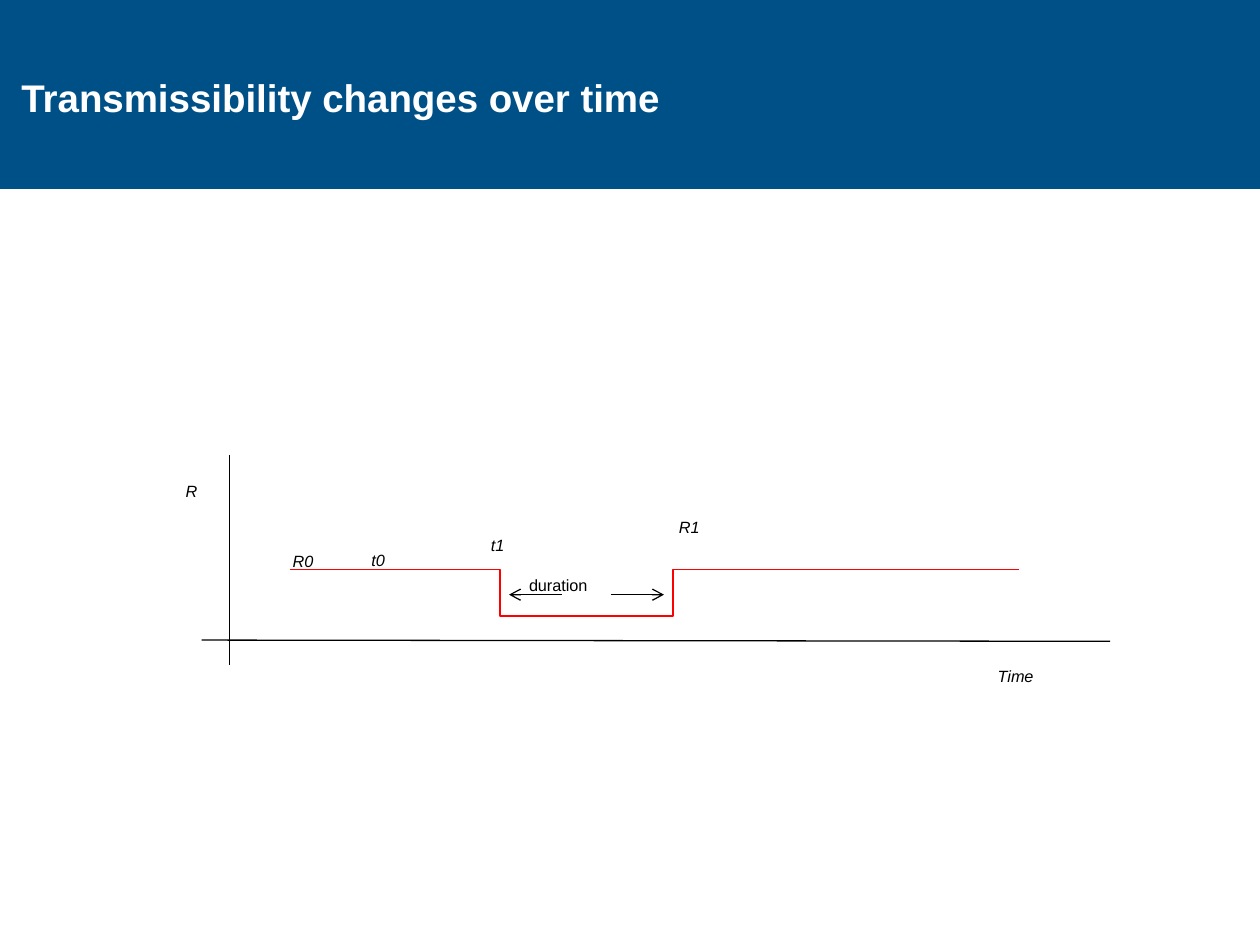
from dataclasses import dataclass
from lxml.etree import SubElement
from pptx import Presentation
from pptx.dml.color import RGBColor as Rgb
from pptx.enum.shapes import MSO_CONNECTOR as Link, MSO_SHAPE as Form
from pptx.enum.text import MSO_ANCHOR as Anchor, MSO_AUTO_SIZE as Fit, PP_ALIGN as Align
from pptx.oxml.ns import qn
from pptx.util import Inches, Pt


@dataclass(frozen=True)
class Theme:
    font: str = "Arial"
    band: Rgb = Rgb(0x00, 0x50, 0x88)
    white: Rgb = Rgb(0xFF, 0xFF, 0xFF)
    black: Rgb = Rgb(0x00, 0x00, 0x00)
    red: Rgb = Rgb(0xFF, 0x00, 0x00)
    title: float = 22
    label: float = 16
    line: float = 0.75
    drop: int = -30000


THEME = Theme()


def add_run(para, text, size, color):
    run = para.add_run()
    run.text = text
    font = run.font
    font.name, font.size = THEME.font, Pt(size)
    font.color.rgb = color
    return run


def add_line(slide, start, end, color=THEME.black, bend=None, arrow=False):
    kind = Link.STRAIGHT if bend is None else Link.ELBOW
    line = slide.shapes.add_connector(kind, *map(Inches, start + end))
    line.line.color.rgb = color
    line.line.width = Pt(THEME.line)
    props = line._element.spPr
    if bend is not None:
        guides = props.find(qn("a:prstGeom")).get_or_add_avLst()
        SubElement(guides, qn("a:gd"), name="adj1", fmla=f"val {round(bend * 100000)}")
    if arrow:
        SubElement(props.find(qn("a:ln")), qn("a:tailEnd"), type="arrow")
    SubElement(props, qn("a:effectLst"))


def add_label(slide, text, left, top, width, align=Align.LEFT, italic=True):
    box = slide.shapes.add_textbox(*map(Inches, (left, top, width, 0.37)))
    frame = box.text_frame
    frame.word_wrap = False
    frame.auto_size = Fit.SHAPE_TO_FIT_TEXT
    para = frame.paragraphs[0]
    para.alignment = align
    run = add_run(para, text, THEME.label, THEME.black)
    run.font.italic = italic
    run.font._element.set("baseline", str(THEME.drop))


def add_header(slide, left, top, width, height):
    band = slide.shapes.add_shape(Form.RECTANGLE, *map(Inches, (left, top, width, height)))
    band.shadow.inherit = False
    band.fill.solid()
    band.fill.fore_color.rgb = THEME.band
    band.line.fill.background()
    box = slide.shapes.add_textbox(*map(Inches, (left + 0.17, top, 7.47, height)))
    frame = box.text_frame
    frame.word_wrap = True
    frame.vertical_anchor = Anchor.MIDDLE
    frame.margin_left = frame.margin_right = frame.margin_top = frame.margin_bottom = 0
    para = frame.paragraphs[0]
    para.line_spacing = 1.1
    add_run(para, "Transmissibility changes over time", THEME.title, THEME.white).font.bold = True


def add_graph(slide, left, top, width, height):
    def at(x, y):
        return left + x, top + y

    high, low, mid = 0.91, 1.28, 1.11
    add_line(slide, at(0.97, high), at(3.03, low), THEME.red, bend=0.81)
    add_line(slide, at(2.89, low), at(6.76, high), THEME.red, bend=0.29)
    add_line(slide, at(0.49, 0), at(0.49, height))
    add_line(slide, at(0.27, 1.47), at(width, 1.48))
    for start, end in ((3.52, 3.94), (3.13, 2.71)):
        add_line(slide, at(start, mid), at(end, mid), arrow=True)

    labels = (
        ("R", 0, 0, 0.38, Align.CENTER),
        ("t0", 1.52, 0.55, 0.4, Align.LEFT),
        ("t1", 2.42, 0.43, 0.4, Align.CENTER),
        ("duration", 2.77, 0.75, 1.01, Align.LEFT),
        ("R1", 3.96, 0.29, 0.5, Align.LEFT),
        ("Time", 6.49, 1.47, 0.71, Align.LEFT),
        ("R0", 0.82, 0.56, 0.51, Align.CENTER),
    )
    for text, x, y, wide, align in labels:
        add_label(slide, text, *at(x, y), wide, align, italic=text != "duration")


def main():
    deck = Presentation()
    deck.slide_width, deck.slide_height = Inches(10), Inches(7.5)
    slide = deck.slides.add_slide(deck.slide_layouts[6])
    add_header(slide, 0, 0, 10, 1.5)
    add_graph(slide, 1.33, 3.61, 7.48, 1.67)
    deck.save("out.pptx")


if __name__ == "__main__":
    main()
